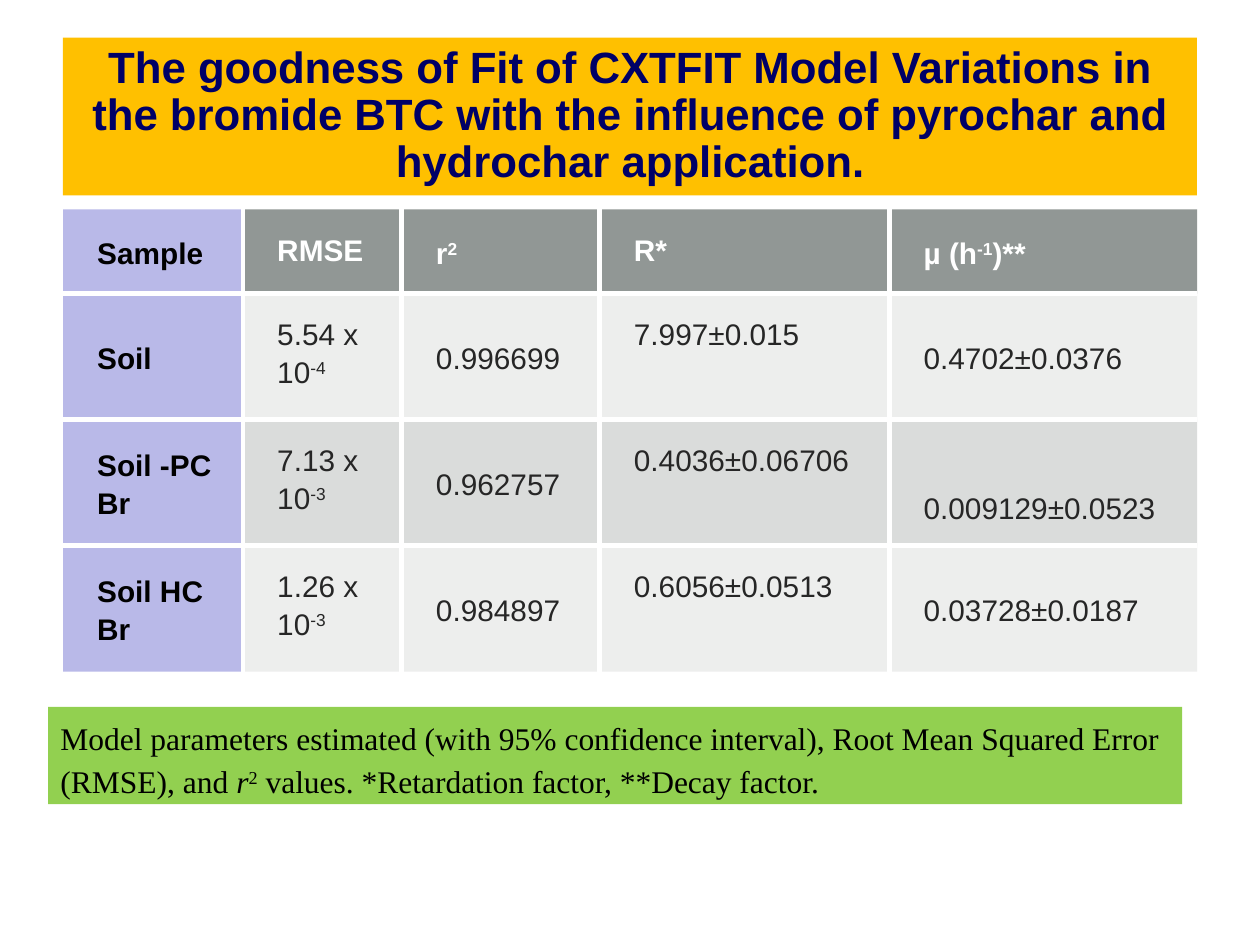
from lxml.etree import SubElement
from pptx import Presentation
from pptx.dml.color import RGBColor
from pptx.enum.shapes import MSO_SHAPE
from pptx.enum.text import MSO_ANCHOR, PP_ALIGN
from pptx.oxml.ns import qn
from pptx.util import Cm, Pt

INK = {
    "gold": "FFC000", "navy": "000066", "green": "92D050",
    "black": "000000", "white": "FFFFFF", "dark": "262626",
    "lilac": "9C9CDF", "slate": "636B68", "grey": "878E8B",
}
COLS = [3.63, 3.2, 3.99, 5.84, 6.2]
ROWS = [1.7, 2.54, 2.54, 2.54]
DATA = [
    ["Sample", "RMSE", "r|^2", "R*", "µ (h|^-1|)**"],
    ["Soil", "5.54 x 10|^-4", "0.996699", "7.997±0.015", "0.4702±0.0376"],
    ["Soil -PC Br", "7.13 x 10|^-3", "0.962757", "0.4036±0.06706", "0.009129±0.0523"],
    ["Soil HC Br", "1.26 x 10|^-3", "0.984897", "0.6056±0.0513", "0.03728±0.0187"],
]


def write(frame, text, size, ink, font="Arial", bold=False,
          align=PP_ALIGN.LEFT, line=1.15, after=8):
    frame.word_wrap = True
    para = frame.paragraphs[0]
    para.alignment = align
    para.line_spacing = line
    para.space_after = Pt(after)
    for part in text.split("|"):
        run = para.add_run()
        run.text = part.lstrip("^~")
        run.font.name = font
        run.font.size = Pt(size)
        run.font.bold = bold
        run.font.italic = part.startswith("~")
        run.font.color.rgb = RGBColor.from_string(INK[ink])
        if part.startswith("^"):
            run.font._element.set("baseline", "30000")


def panel(slide, box, ink, anchor):
    shape = slide.shapes.add_shape(MSO_SHAPE.RECTANGLE, *map(Cm, box))
    shape.shadow.inherit = False
    shape.fill.solid()
    shape.fill.fore_color.rgb = RGBColor.from_string(INK[ink])
    shape.line.fill.background()
    shape.text_frame.vertical_anchor = anchor
    return shape.text_frame


def title(slide, box):
    frame = panel(slide, box, "gold", MSO_ANCHOR.MIDDLE)
    write(frame, "The goodness of Fit of CXTFIT Model Variations in the bromide BTC "
          "with the influence of pyrochar and hydrochar application.",
          25, "navy", bold=True, align=PP_ALIGN.CENTER, line=0.9, after=6)


def note(slide, box):
    frame = panel(slide, box, "green", MSO_ANCHOR.TOP)
    write(frame, "Model parameters estimated (with 95% confidence interval), "
          "Root Mean Squared Error (RMSE), and |~r|^2| values. "
          "*Retardation factor, **Decay factor.",
          18, "black", font="Times New Roman")


def edge(cell, sides):
    props = cell._tc.get_or_add_tcPr()
    for side, shown in sides.items():
        line = SubElement(props, qn("a:ln" + side), w=str(Pt(3)))
        if shown:
            fill = SubElement(line, qn("a:solidFill"))
            SubElement(fill, qn("a:srgbClr"), val=INK["white"])
        else:
            SubElement(line, qn("a:noFill"))


def tint(cell, ink, alpha):
    cell.fill.solid()
    cell.fill.fore_color.rgb = RGBColor.from_string(INK[ink])
    color = cell._tc.tcPr.find(qn("a:solidFill")).find(qn("a:srgbClr"))
    SubElement(color, qn("a:alpha"), val=str(alpha * 1000))


def style(row, col):
    if col == 0:
        return "lilac", 70, "black", True
    if row == 0:
        return "slate", 70, "white", True
    return "grey", 15 if row % 2 else 30, "dark", False


def grid(slide, box):
    table = slide.shapes.add_table(len(ROWS), len(COLS), *map(Cm, box)).table
    table.first_row = table.horz_banding = False
    for col, width in zip(table.columns, COLS):
        col.width = Cm(width)
    for row, height in zip(table.rows, ROWS):
        row.height = Cm(height)
    for r, line in enumerate(DATA):
        for c, text in enumerate(line):
            cell = table.cell(r, c)
            fill, alpha, ink, bold = style(r, c)
            edge(cell, {"L": c > 0, "R": c < len(COLS) - 1,
                        "T": r > 0, "B": r < len(ROWS) - 1})
            tint(cell, fill, alpha)
            cell.margin_left = Cm(0.69)
            cell.margin_right = cell.margin_top = cell.margin_bottom = Cm(0.4)
            cell.vertical_anchor = MSO_ANCHOR.TOP if c % 2 else MSO_ANCHOR.MIDDLE
            write(cell.text_frame, text, 17, ink, bold=bold)
    table.cell(2, 4).vertical_anchor = MSO_ANCHOR.BOTTOM


def main():
    deck = Presentation()
    deck.slide_width, deck.slide_height = Cm(25.4), Cm(19.05)
    slide = deck.slides.add_slide(deck.slide_layouts[6])
    title(slide, (1.27, 0.76, 22.86, 3.18))
    grid(slide, (1.27, 4.22, sum(COLS), sum(ROWS)))
    note(slide, (0.97, 14.25, 22.86, 1.96))
    deck.save("out.pptx")


if __name__ == "__main__":
    main()
